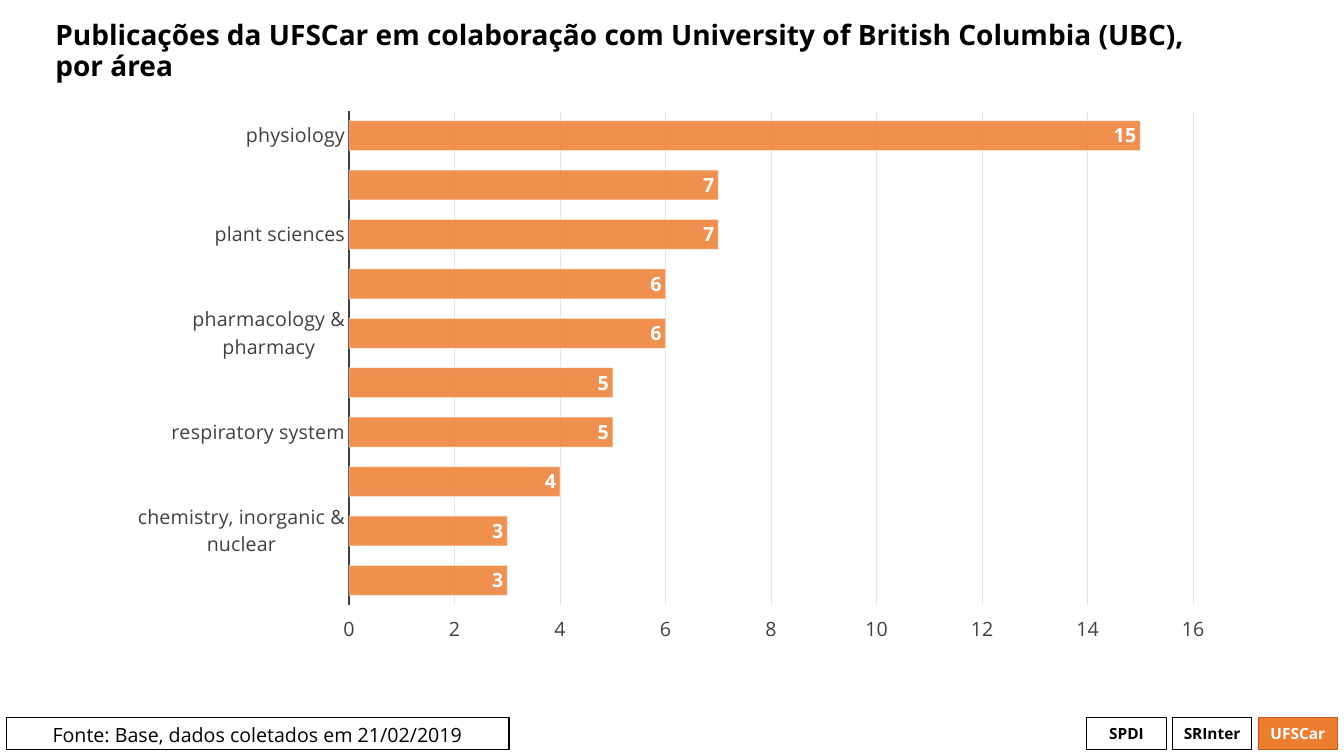
from lxml import etree
from pptx import Presentation
from pptx.chart.data import CategoryChartData
from pptx.dml.color import RGBColor
from pptx.enum import chart as ch, shapes, text
from pptx.oxml import parse_xml
from pptx.oxml.ns import qn
from pptx.util import Pt

FONT = "Open Sans"
BLACK = RGBColor(0x00, 0x00, 0x00)
WHITE = RGBColor(0xFF, 0xFF, 0xFF)
GRAY = RGBColor(0x40, 0x40, 0x40)
GRID = RGBColor(0xE6, 0xE6, 0xE6)
ORANGE = RGBColor(0xED, 0x7D, 0x31)
RUST = RGBColor(0xC5, 0x5A, 0x11)

# Every second bar is unlabelled.
AREAS = [
    ("physiology", 15),
    ("", 7),
    ("plant sciences", 7),
    ("", 6),
    ("pharmacology & pharmacy", 6),
    ("", 5),
    ("respiratory system", 5),
    ("", 4),
    ("chemistry, inorganic & nuclear", 3),
    ("", 3),
]
TAGS = [
    ("SPDI", None, BLACK, BLACK),
    ("SRInter", None, BLACK, BLACK),
    ("UFSCar", ORANGE, RUST, WHITE),
]
LAYOUT = (
    '<c:layout xmlns:c="http://schemas.openxmlformats.org/drawingml/2006/chart">'
    '<c:manualLayout><c:layoutTarget val="inner"/>'
    '<c:xMode val="edge"/><c:yMode val="edge"/>'
    '<c:x val="0.21"/><c:y val="0.02"/><c:w val="0.76"/><c:h val="0.89"/>'
    '</c:manualLayout></c:layout>'
)


def style(font, size, color, bold=False):
    font.name = FONT
    font.size = Pt(size)
    font.bold = bold
    font.color.rgb = color


def add_run(para, words, size, color, bold=False):
    run = para.add_run()
    run.text = words
    style(run.font, size, color, bold)


def fade(fill, percent):
    """Set the opacity of a solid fill."""
    fill_xml = fill._xPr.find(qn("a:solidFill"))
    alpha = etree.SubElement(fill_xml[0], qn("a:alpha"))
    alpha.set("val", str(percent * 1000))


def add_title(slide):
    box = slide.shapes.add_textbox(Pt(32.4), Pt(4.3), Pt(893.5), Pt(65.5))
    frame = box.text_frame
    frame.word_wrap = True
    frame.vertical_anchor = text.MSO_ANCHOR.MIDDLE
    para = frame.paragraphs[0]
    para.line_spacing = 0.9
    add_run(para, "Publicações da UFSCar em colaboração com "
            "University of British Columbia (UBC),", 20, BLACK, True)
    para.add_line_break()
    add_run(para, "por área", 20, BLACK, True)


def add_box(slide, left, width, words, size, fill, line, color, bold):
    """Add one bordered box of the footer row."""
    box = slide.shapes.add_shape(
        shapes.MSO_SHAPE.RECTANGLE, Pt(left), Pt(512.6), Pt(width), Pt(23))
    box.shadow.inherit = False
    if fill is None:
        box.fill.background()
    else:
        box.fill.solid()
        box.fill.fore_color.rgb = fill
    box.line.color.rgb = line
    box.line.width = Pt(0.75)
    frame = box.text_frame
    frame.word_wrap = True
    frame.margin_left = frame.margin_right = Pt(2)
    para = frame.paragraphs[0]
    para.alignment = text.PP_ALIGN.CENTER
    add_run(para, words, size, color, bold)
    return box


def add_bars(slide):
    data = CategoryChartData()
    data.categories = [name for name, count in AREAS]
    data.add_series("", [count for name, count in AREAS])
    chart = slide.shapes.add_chart(
        ch.XL_CHART_TYPE.BAR_CLUSTERED,
        Pt(82.8), Pt(71.3), Pt(793.4), Pt(396.7), data).chart
    chart.has_legend = False
    chart.has_title = False
    style(chart.font, 14, BLACK)
    style_axes(chart)
    style_bars(chart.plots[0])
    area = chart._chartSpace.chart.plotArea
    old = area.find(qn("c:layout"))
    if old is not None:
        area.remove(old)
    area.insert(0, parse_xml(LAYOUT))


def style_axes(chart):
    names, counts = chart.category_axis, chart.value_axis
    for axis in (names, counts):
        axis.major_tick_mark = ch.XL_TICK_MARK.NONE
        axis.minor_tick_mark = ch.XL_TICK_MARK.NONE
        style(axis.tick_labels.font, 14, GRAY)
    names.reverse_order = True
    names.crosses = ch.XL_AXIS_CROSSES.MAXIMUM
    names.format.line.color.rgb = GRAY
    names.format.line.width = Pt(1.5)
    counts.tick_label_position = ch.XL_TICK_LABEL_POSITION.HIGH
    counts.minimum_scale = 0
    counts.maximum_scale = 16
    counts.major_unit = 2
    counts.format.line.fill.background()
    grid = counts.major_gridlines.format.line
    grid.color.rgb = GRID
    grid.width = Pt(0.75)


def style_bars(plot):
    plot.gap_width = 65
    plot.vary_by_categories = False
    bars = plot.series[0]
    bars.format.fill.solid()
    bars.format.fill.fore_color.rgb = ORANGE
    fade(bars.format.fill, 85)
    line = bars.format.line
    line.color.rgb = WHITE
    line.width = Pt(0.75)
    fade(line.fill, 50)
    labels = bars.data_labels
    labels.show_value = True
    labels.position = ch.XL_LABEL_POSITION.INSIDE_END
    style(labels.font, 14, WHITE, True)


def main():
    deck = Presentation()
    deck.slide_width, deck.slide_height = Pt(960), Pt(540)
    slide = deck.slides.add_slide(deck.slide_layouts[6])
    for i, (words, fill, line, color) in enumerate(TAGS):
        add_box(slide, 776.2 + i * 61.2, 56.9, words, 11, fill, line, color, True)
    note = add_box(slide, 4.3, 359.3, "Fonte: Base, dados coletados em 21/02/2019",
                   14, None, BLACK, BLACK, False)
    note.text_frame.vertical_anchor = text.MSO_ANCHOR.TOP
    add_title(slide)
    add_bars(slide)
    deck.save("out.pptx")


if __name__ == "__main__":
    main()
